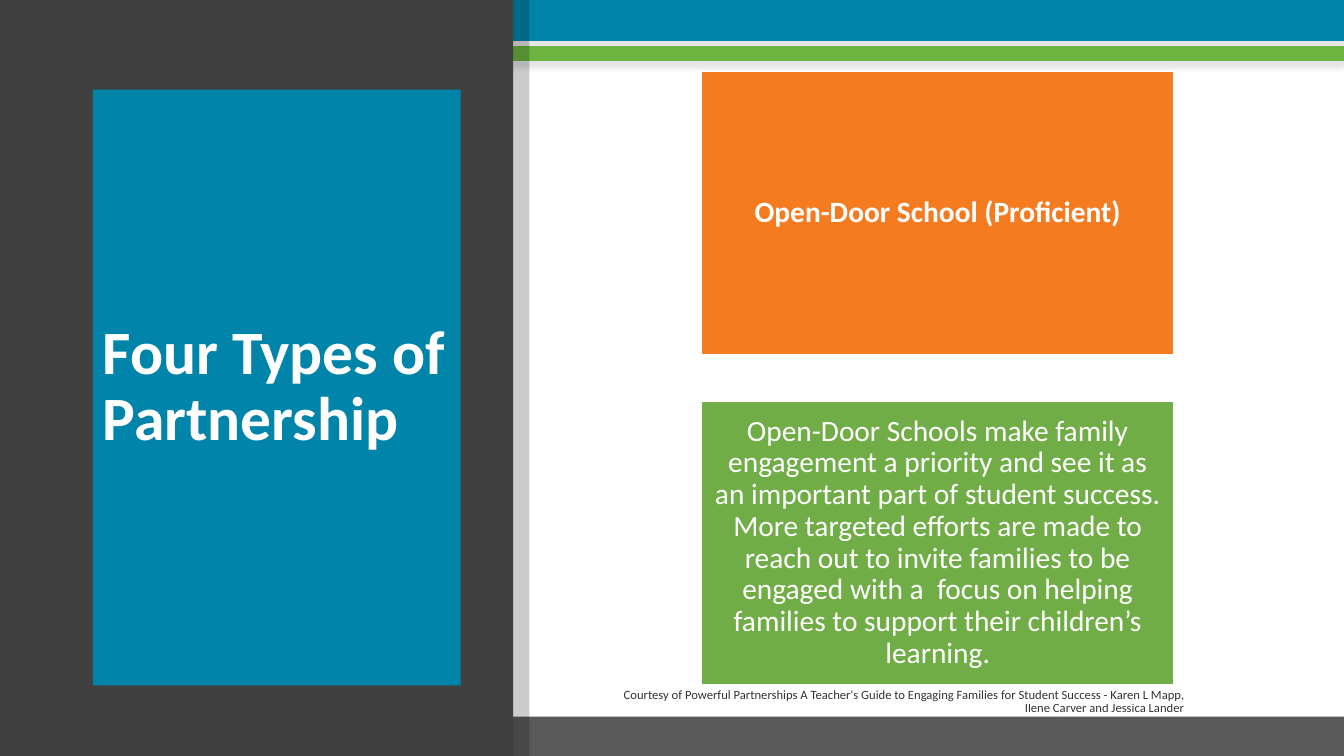
from dataclasses import dataclass

from lxml import etree
from pptx import Presentation
from pptx.dml.color import RGBColor
from pptx.enum.shapes import MSO_SHAPE
from pptx.enum.text import MSO_ANCHOR, PP_ALIGN
from pptx.oxml import parse_xml
from pptx.oxml.ns import nsdecls, qn
from pptx.util import Inches, Pt

RECTANGLE = MSO_SHAPE.RECTANGLE
TOP, MIDDLE = MSO_ANCHOR.TOP, MSO_ANCHOR.MIDDLE
LEFT, CENTER, RIGHT = PP_ALIGN.LEFT, PP_ALIGN.CENTER, PP_ALIGN.RIGHT


@dataclass(frozen=True)
class Theme:
    font: str = "Calibri"
    blue: str = "0084A9"
    stripe_green: str = "6CB33F"
    card_green: str = "70AD47"
    orange: str = "F47B20"
    charcoal: str = "404040"
    footer_gray: str = "5A5A5A"
    black: str = "000000"
    white: str = "FFFFFF"
    title_size: int = 44
    card_size: int = 21
    credit_size: int = 9


class SlideBuilder:
    def __init__(self, slide, theme):
        self.slide = slide
        self.theme = theme

    def rectangle(self, box, fill, outline=None):
        shape = self.slide.shapes.add_shape(RECTANGLE, *map(Inches, box))
        shape.shadow.inherit = False
        shape.fill.solid()
        shape.fill.fore_color.rgb = RGBColor.from_string(fill)
        if outline:
            shape.line.color.rgb = RGBColor.from_string(outline)
            shape.line.width = Pt(1)
        else:
            shape.line.fill.background()
        return shape

    def shadowed_bar(self, box, fill, outline=None):
        shape = self.rectangle(box, fill, outline)
        effects = shape._element.spPr.find(qn("a:effectLst"))
        effects.append(parse_xml(
            f'<a:outerShdw {nsdecls("a")} blurRad="{Pt(4)}" dist="{Pt(4)}" '
            f'dir="5400000" algn="t" rotWithShape="0">'
            f'<a:srgbClr val="{self.theme.black}"><a:alpha val="9000"/></a:srgbClr>'
            f'</a:outerShdw>'))

    def text_box(self, box):
        return self.slide.shapes.add_textbox(*map(Inches, box))

    def add_text(self, shape, text, size, color, anchor=MIDDLE, align=CENTER,
                 bold=False, margin=None, space_after=0):
        frame = shape.text_frame
        frame_format = {"word_wrap": True, "vertical_anchor": anchor}
        if margin is not None:
            for side in ("left", "top", "right", "bottom"):
                frame_format[f"margin_{side}"] = Inches(margin)
        paragraph = frame.paragraphs[0]
        run = paragraph.add_run()
        run.text = text
        run.font.color.rgb = RGBColor.from_string(color)
        formats = (
            (frame, frame_format),
            (paragraph, {"alignment": align, "line_spacing": 0.9,
                         "space_after": Pt(space_after)}),
            (run.font, {"name": self.theme.font, "size": Pt(size), "bold": bold}),
        )
        for target, values in formats:
            for name, value in values.items():
                setattr(target, name, value)

    def set_opacity(self, shape, percent):
        for color in shape._element.xpath(".//a:solidFill/a:srgbClr"):
            etree.SubElement(color, qn("a:alpha")).set("val", str(percent * 1000))


def main():
    presentation = Presentation()
    presentation.slide_width = Inches(13.33)
    presentation.slide_height = Inches(7.5)
    theme = Theme()
    builder = SlideBuilder(
        presentation.slides.add_slide(presentation.slide_layouts[6]), theme)

    # Header stripes and footer
    builder.shadowed_bar((0, 0, 13.33, 0.4), theme.blue, theme.blue)
    builder.shadowed_bar((0, 0.46, 13.33, 0.14), theme.stripe_green, theme.stripe_green)
    builder.rectangle((0, 7.11, 13.33, 0.39), theme.footer_gray)

    # Side panel with the title
    builder.rectangle((0, 0, 5.09, 7.5), theme.charcoal)
    title = builder.rectangle((0.92, 0.89, 3.65, 5.91), theme.blue)
    builder.add_text(title, "Four Types of Partnership", theme.title_size,
                     theme.white, align=LEFT, bold=True)
    panel_edge = builder.rectangle((5.09, 0, 0.16, 7.5), theme.black)
    builder.set_opacity(panel_edge, 20)

    # Credit line
    credit = builder.text_box((5.97, 6.78, 5.87, 0.4))
    builder.add_text(
        credit,
        "Courtesy of Powerful Partnerships A Teacher's Guide to Engaging Families "
        "for Student Success - Karen L Mapp, Ilene Carver and Jessica Lander",
        theme.credit_size, theme.black, anchor=TOP, align=RIGHT, space_after=6)
    builder.set_opacity(credit, 80)

    # Partnership type and its description
    cards = (
        ("Open-Door School (Proficient)", theme.orange, True),
        ("Open-Door Schools make family engagement a priority and see it as an "
         "important part of student success. More targeted efforts are made to "
         "reach out to invite families to be engaged with a  focus on helping "
         "families to support their children’s learning.", theme.card_green, False),
    )
    card_top, card_step = 0.71, 3.27
    for index, (text, fill, bold) in enumerate(cards):
        card = builder.rectangle(
            (6.96, card_top + index * card_step, 4.68, 2.81), fill, theme.white)
        builder.add_text(card, text, theme.card_size, theme.white, bold=bold, margin=0.09)

    presentation.save("out.pptx")


if __name__ == "__main__":
    main()
